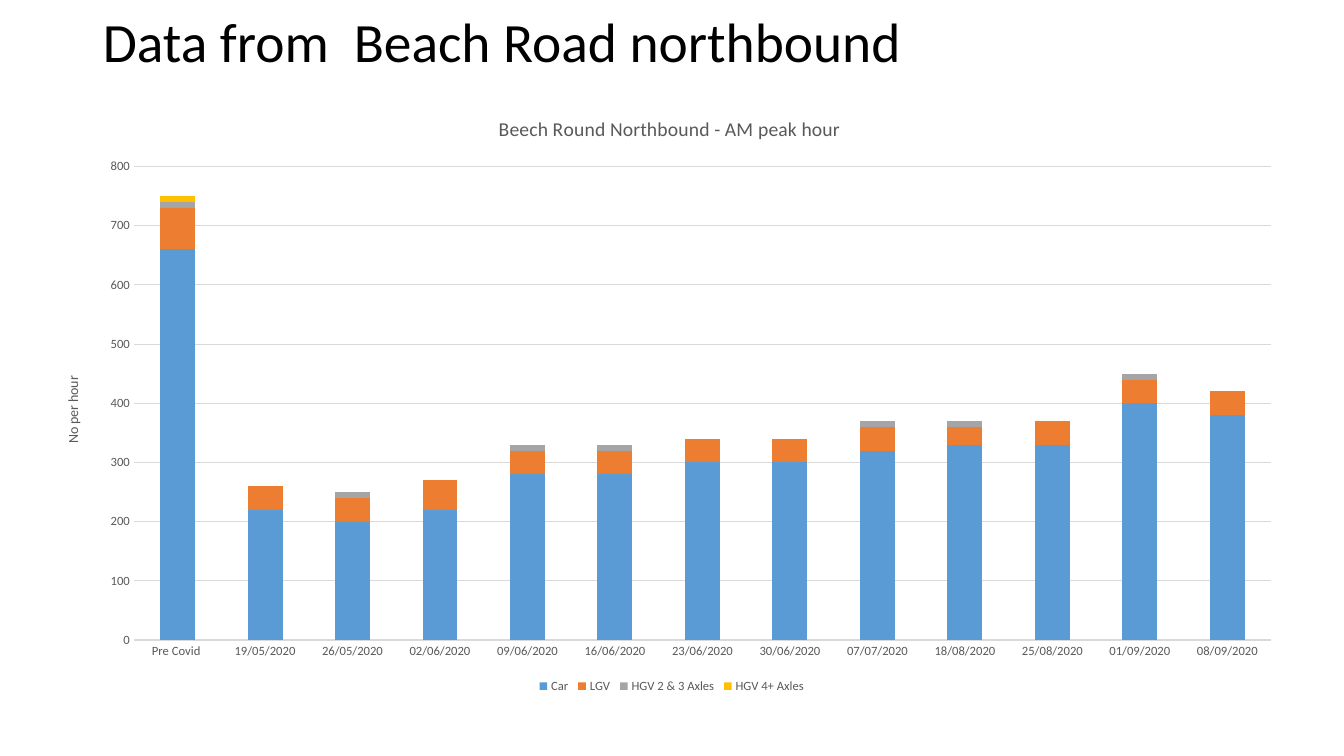
from dataclasses import dataclass

from lxml.etree import SubElement
from pptx import Presentation
from pptx.chart.data import CategoryChartData
from pptx.dml.color import RGBColor
from pptx.enum.chart import XL_CHART_TYPE, XL_LEGEND_POSITION, XL_TICK_MARK
from pptx.enum.text import MSO_ANCHOR, PP_ALIGN
from pptx.oxml.ns import qn
from pptx.util import Inches, Pt

HEADING = "Data from  Beach Road northbound"
CHART_TITLE = "Beech Round Northbound - AM peak hour"
AXIS_TITLE = "No per hour"
VEHICLES = ("Car", "LGV", "HGV 2 & 3 Axles", "HGV 4+ Axles")
COUNTS = {
    "Pre Covid ": (660, 70, 10, 10),
    "19/05/2020": (220, 40, 0, 0),
    "26/05/2020": (200, 40, 10, 0),
    "02/06/2020": (220, 50, 0, 0),
    "09/06/2020": (280, 40, 10, 0),
    "16/06/2020": (280, 40, 10, 0),
    "23/06/2020": (300, 40, 0, 0),
    "30/06/2020": (300, 40, 0, 0),
    "07/07/2020": (320, 40, 10, 0),
    "18/08/2020": (330, 30, 10, 0),
    "25/08/2020": (330, 40, 0, 0),
    "01/09/2020": (400, 40, 10, 0),
    "08/09/2020": (380, 40, 0, 0),
}

SLIDE_SIZE = (13.33, 7.5)
# left, top, width, height as shares of the slide
HEADING_BOX = (0.069, 0.013, 0.863, 0.093)
CHART_BOX = (0.032, 0.125, 0.932, 0.801)
# left, top[, width, height] as shares of the chart
PLOT_AREA = (0.0725, 0.119, 0.908, 0.782)
CHART_TITLE_AT = (0.361, 0.028)
AXIS_TITLE_AT = (0.0145, 0.461)
LEGEND_AREA = (0.392, 0.967, 0.22, 0.037)


@dataclass(frozen=True)
class Theme:
    face: str = "Calibri"
    ink: str = "000000"
    muted: str = "595959"
    rule: str = "D9D9D9"
    series: tuple = ("5B9BD5", "ED7D31", "A5A5A5", "FFC000")
    heading: float = 39.6
    chart_title: float = 14
    axis_title: float = 10
    label: float = 9
    hairline: float = 0.75


THEME = Theme()


def on_slide(shares):
    return [Inches(share * SLIDE_SIZE[i % 2]) for i, share in enumerate(shares)]


def style_font(font, size, color=THEME.muted):
    for attribute, value in {"name": THEME.face, "size": Pt(size), "bold": False}.items():
        setattr(font, attribute, value)
    font.color.rgb = RGBColor.from_string(color)


def style_rule(line):
    line.color.rgb = RGBColor.from_string(THEME.rule)
    line.width = Pt(THEME.hairline)


def place_in_chart(part, shares, inner=False):
    """Give a chart part a manual layout in shares of the chart."""
    layout = part.find(qn("c:layout"))
    if layout is None:
        layout = SubElement(part, qn("c:layout"))
        overlay = part.find(qn("c:overlay"))
        if overlay is not None:
            overlay.addprevious(layout)
        elif inner:
            part.insert(0, layout)
    manual = SubElement(layout, qn("c:manualLayout"))
    settings = [("layoutTarget", "inner")] if inner else []
    settings += [("xMode", "edge"), ("yMode", "edge")]
    settings += zip("xywh", map(str, shares))
    for tag, value in settings:
        SubElement(manual, qn(f"c:{tag}")).set("val", value)


def write_title(owner_title, wording, size):
    frame = owner_title.text_frame
    frame.text = wording
    style_font(frame.paragraphs[0].runs[0].font, size)


def add_heading(slide):
    heading = slide.shapes.title
    heading.left, heading.top, heading.width, heading.height = on_slide(HEADING_BOX)
    write_title(heading, HEADING, THEME.heading)
    frame = heading.text_frame
    frame.vertical_anchor = MSO_ANCHOR.MIDDLE
    line = frame.paragraphs[0]
    line.alignment = PP_ALIGN.LEFT
    line.line_spacing = 0.9
    style_font(line.runs[0].font, THEME.heading, THEME.ink)


def add_traffic_chart(slide):
    traffic = CategoryChartData()
    traffic.categories = list(COUNTS)
    for vehicle, counts in zip(VEHICLES, zip(*COUNTS.values())):
        traffic.add_series(vehicle, counts)
    chart = slide.shapes.add_chart(
        XL_CHART_TYPE.COLUMN_STACKED, *on_slide(CHART_BOX), traffic
    ).chart
    style_font(chart.font, THEME.label)

    bars = chart.plots[0]
    bars.gap_width, bars.overlap, bars.vary_by_categories = 150, 100, False
    for series, color in zip(bars.series, THEME.series):
        series.format.fill.solid()
        series.format.fill.fore_color.rgb = RGBColor.from_string(color)

    dates, hourly = chart.category_axis, chart.value_axis
    for axis in (dates, hourly):
        axis.major_tick_mark = axis.minor_tick_mark = XL_TICK_MARK.NONE
        style_font(axis.tick_labels.font, THEME.label)
    style_rule(dates.format.line)
    hourly.format.line.fill.background()
    hourly.minimum_scale, hourly.maximum_scale, hourly.major_unit = 0, 800, 100
    style_rule(hourly.major_gridlines.format.line)

    write_title(chart.chart_title, CHART_TITLE, THEME.chart_title)
    chart.chart_title.include_in_layout = False
    write_title(hourly.axis_title, AXIS_TITLE, THEME.axis_title)
    axis_title = hourly.axis_title._element
    turn = next(axis_title.iter(qn("a:bodyPr")))
    turn.set("rot", "-5400000")
    turn.set("vert", "horz")

    chart.has_legend = True
    chart.legend.position = XL_LEGEND_POSITION.BOTTOM
    chart.legend.include_in_layout = False
    style_font(chart.legend.font, THEME.label)

    place_in_chart(next(chart._chartSpace.iter(qn("c:plotArea"))), PLOT_AREA, inner=True)
    place_in_chart(chart.chart_title._element, CHART_TITLE_AT)
    place_in_chart(axis_title, AXIS_TITLE_AT)
    place_in_chart(chart.legend._element, LEGEND_AREA)


def main():
    deck = Presentation()
    deck.slide_width, deck.slide_height = map(Inches, SLIDE_SIZE)
    slide = deck.slides.add_slide(deck.slide_layouts.get_by_name("Title Only"))
    add_heading(slide)
    add_traffic_chart(slide)
    deck.save("out.pptx")


if __name__ == "__main__":
    main()
